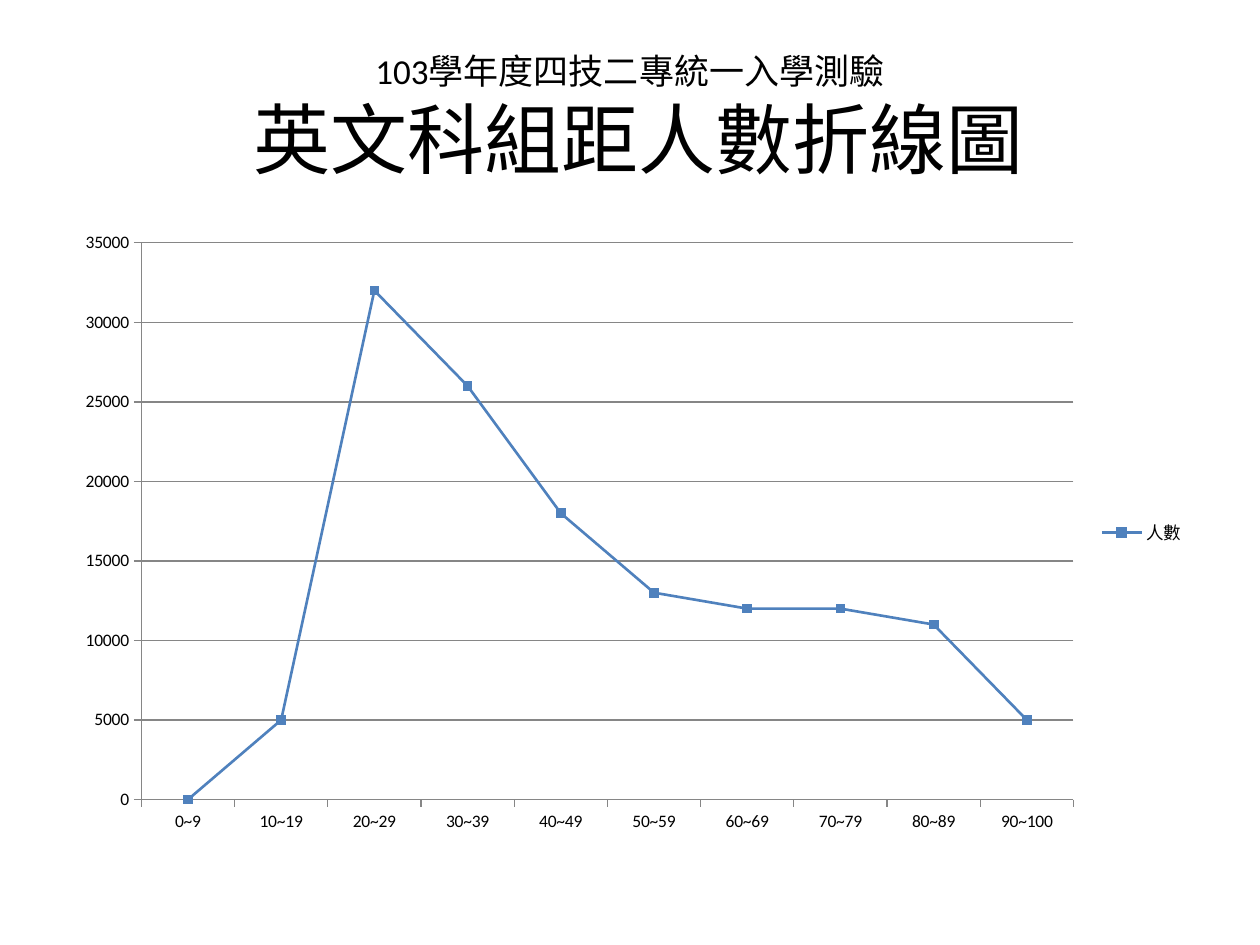
from dataclasses import dataclass

from pptx import Presentation
from pptx.chart.chart import Chart
from pptx.chart.data import CategoryChartData
from pptx.dml.color import RGBColor
from pptx.enum.chart import XL_CHART_TYPE, XL_LEGEND_POSITION, XL_MARKER_STYLE, XL_TICK_MARK
from pptx.enum.text import MSO_ANCHOR, PP_ALIGN
from pptx.shapes.autoshape import Shape
from pptx.slide import Slide
from pptx.util import Inches, Pt

BLACK = RGBColor(0x00, 0x00, 0x00)
BLUE = RGBColor(0x4F, 0x81, 0xBD)
GRAY = RGBColor(0x86, 0x86, 0x86)
FONT = "Calibri"


@dataclass(frozen=True)
class TitleLine:
    text: str
    size: int


@dataclass(frozen=True)
class ScoreBand:
    label: str
    count: int


TITLE_LINES = [
    TitleLine("103學年度四技二專統一入學測驗", 20),
    TitleLine(" 英文科組距人數折線圖", 44),
]
SCORE_BANDS = [
    ScoreBand("0~9", 0),
    ScoreBand("10~19", 5000),
    ScoreBand("20~29", 32000),
    ScoreBand("30~39", 26000),
    ScoreBand("40~49", 18000),
    ScoreBand("50~59", 13000),
    ScoreBand("60~69", 12000),
    ScoreBand("70~79", 12000),
    ScoreBand("80~89", 11000),
    ScoreBand("90~100", 5000),
]


def fill_title(title: Shape, lines: list[TitleLine]) -> None:
    title.left, title.top = Inches(0.5), Inches(0.3)
    title.width, title.height = Inches(9), Inches(1.25)
    frame = title.text_frame
    frame.text = "\v".join(line.text for line in lines)
    frame.vertical_anchor = MSO_ANCHOR.MIDDLE
    para = frame.paragraphs[0]
    para.alignment = PP_ALIGN.CENTER
    for span, line in zip(para.runs, lines):
        span.font.size = Pt(line.size)
        span.font.name = FONT
        span.font.color.rgb = BLACK


def add_score_chart(slide: Slide, bands: list[ScoreBand]) -> Chart:
    data = CategoryChartData()
    data.categories = [band.label for band in bands]
    data.add_series("人數", [band.count for band in bands])
    frame = slide.shapes.add_chart(
        XL_CHART_TYPE.LINE_MARKERS, Inches(0.5), Inches(1.75), Inches(9), Inches(4.95), data
    )
    return frame.chart


def style_chart(chart: Chart) -> None:
    chart.has_title = False
    chart.font.size = Pt(10)
    chart.font.name = FONT
    chart.font.color.rgb = BLACK
    chart.has_legend = True
    chart.legend.position = XL_LEGEND_POSITION.RIGHT
    chart.legend.include_in_layout = False

    value_axis = chart.value_axis
    value_axis.minimum_scale = 0
    value_axis.maximum_scale = 35000
    value_axis.major_unit = 5000
    value_axis.has_major_gridlines = True
    for axis in (chart.category_axis, value_axis):
        axis.major_tick_mark = XL_TICK_MARK.OUTSIDE
    for line in (
        chart.category_axis.format.line,
        value_axis.format.line,
        value_axis.major_gridlines.format.line,
    ):
        line.color.rgb = GRAY
        line.width = Pt(0.75)

    plot = chart.plots[0]
    plot.vary_by_categories = False
    series = plot.series[0]
    series.smooth = False
    series.format.line.color.rgb = BLUE
    series.format.line.width = Pt(1.5)
    marker = series.marker
    marker.style = XL_MARKER_STYLE.SQUARE
    marker.size = 5
    marker.format.fill.solid()
    marker.format.fill.fore_color.rgb = BLUE
    marker.format.line.color.rgb = BLUE


def main() -> None:
    deck = Presentation()
    deck.slide_width, deck.slide_height = Inches(10), Inches(7.5)
    page = deck.slides.add_slide(deck.slide_layouts[5])
    fill_title(page.shapes.title, TITLE_LINES)
    style_chart(add_score_chart(page, SCORE_BANDS))
    deck.save("out.pptx")


if __name__ == "__main__":
    main()
